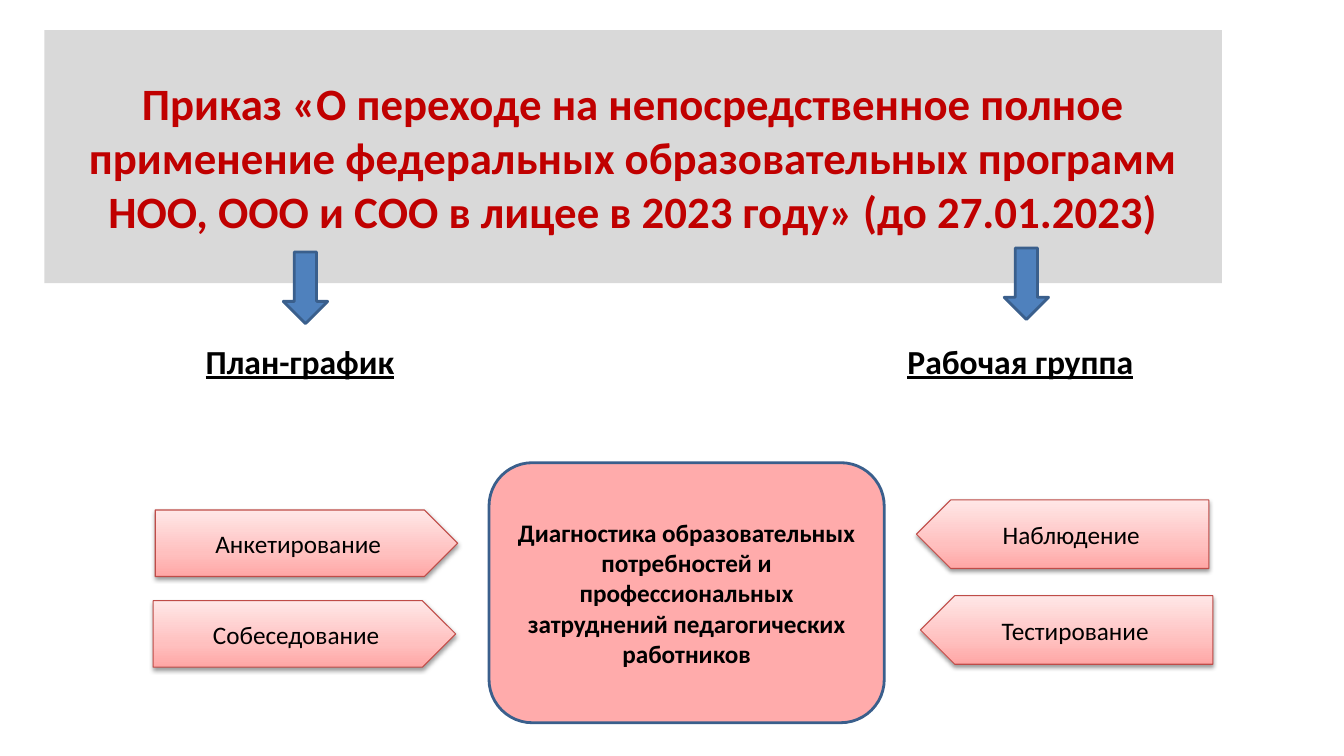
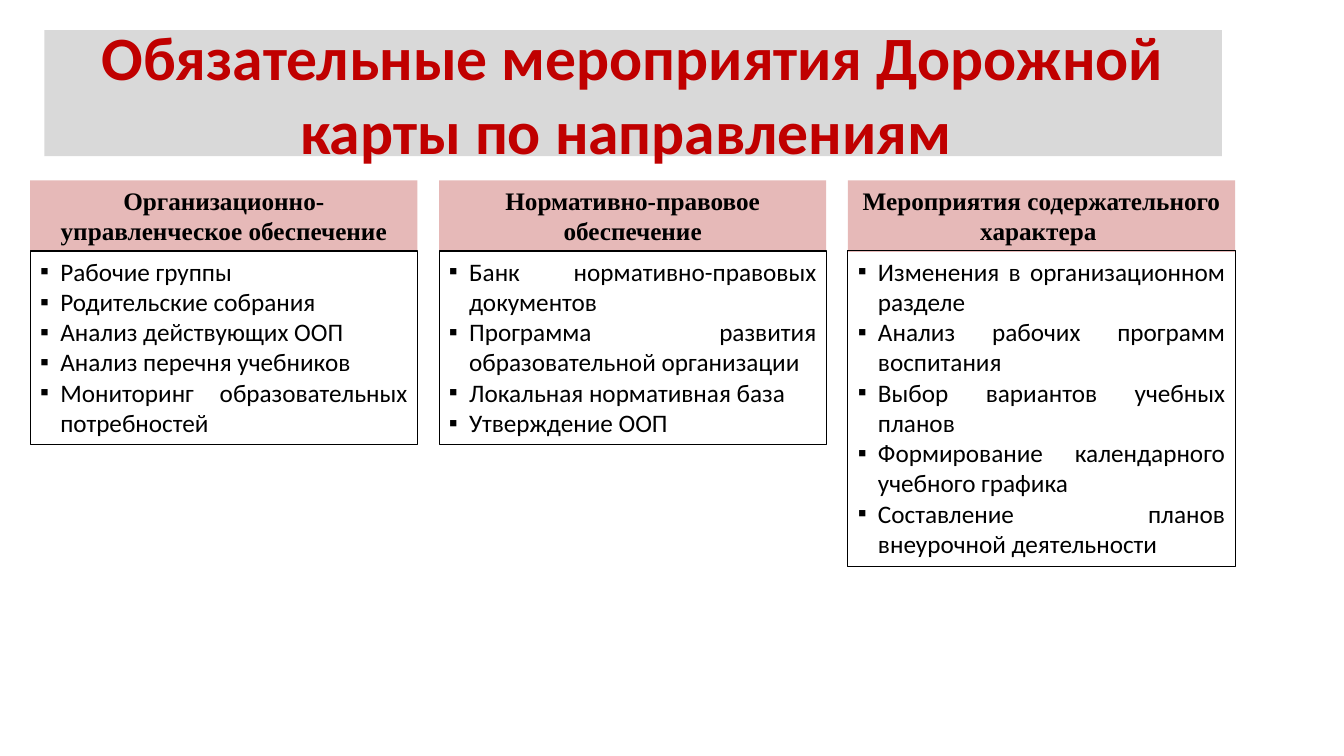
"""Build two slides on the move to the federal educational programmes."""
from lxml import etree
from pptx import Presentation
from pptx.dml.color import RGBColor
from pptx.enum.shapes import MSO_SHAPE
from pptx.enum.text import MSO_ANCHOR, PP_ALIGN
from pptx.oxml import parse_xml
from pptx.oxml.ns import nsdecls, qn
from pptx.util import Inches, Pt

BLACK = RGBColor(0, 0, 0)
TITLE_RED = RGBColor(0xC0, 0, 0)
TITLE_GREY = RGBColor(0xD9, 0xD9, 0xD9)
ARROW_BLUE = RGBColor(0x4F, 0x81, 0xBD)
EDGE_BLUE = RGBColor(0x3A, 0x5F, 0x8C)
CENTRE_PINK = RGBColor(0xFF, 0xAB, 0xAB)
HEADING_PINK = RGBColor(0xE6, 0xB9, 0xB8)
TAG_RED = RGBColor(0xBF, 0x4C, 0x48)
TAG_STOPS = [
    (0, RGBColor(0xFF, 0xA6, 0xA5)),
    (35, RGBColor(0xFF, 0xC0, 0xBF)),
    (100, RGBColor(0xFF, 0xE7, 0xE7)),
]

ORDER_TITLE = ("Приказ «О переходе на непосредственное полное применение "
               "федеральных образовательных программ НОО, ООО и СОО в лицее "
               "в 2023 году» (до 27.01.2023)")
DIAGNOSTICS = ("Диагностика образовательных потребностей и профессиональных "
               "затруднений педагогических работников")
OUTCOMES = [
    ("План-график", (0.53, 3.33, 4.89, 0.5), (2.81, 2.5)),
    ("Рабочая группа", (8.09, 3.33, 4.06, 0.5), (9.96, 2.46)),
]
METHODS = [
    ("Анкетирование", (1.54, 5.06, 3, 0.66), False),
    ("Собеседование", (1.52, 5.96, 3, 0.66), False),
    ("Наблюдение", (9.09, 4.96, 2.9, 0.68), True),
    ("Тестирование", (9.13, 5.91, 2.9, 0.68), True),
]
DIRECTIONS = [
    ("Организационно-управленческое обеспечение", 1.92, [
        "Рабочие группы",
        "Родительские собрания",
        "Анализ действующих ООП",
        "Анализ перечня учебников",
        "Мониторинг образовательных потребностей",
    ]),
    ("Нормативно-правовое обеспечение", 1.92, [
        "Банк нормативно-правовых документов",
        "Программа развития образовательной организации",
        "Локальная нормативная база",
        "Утверждение ООП",
    ]),
    ("Мероприятия содержательного характера ", 3.13, [
        "Изменения в организационном разделе",
        "Анализ рабочих программ воспитания",
        "Выбор вариантов учебных планов",
        "Формирование календарного учебного графика",
        "Составление планов внеурочной деятельности",
    ]),
]


def add_box(slide, kind, box, fill=None, line=None, width=0.75):
    """Add a shadowless preset shape with the given fill and line."""
    s = slide.shapes.add_shape(kind, *map(Inches, box))
    s.shadow.inherit = False
    if fill is None:
        s.fill.background()
    else:
        s.fill.solid()
        s.fill.fore_color.rgb = fill
    if line is None:
        s.line.fill.background()
    else:
        s.line.color.rgb = line
        s.line.width = Pt(width)
    return s


def set_font(p, size, bold=False, color=BLACK, name="Calibri"):
    """Set the font of a whole paragraph."""
    p.font.size = Pt(size)
    p.font.bold = bold
    p.font.name = name
    p.font.color.rgb = color


def write(s, text, size, anchor=MSO_ANCHOR.MIDDLE, **font):
    """Write one centred paragraph into a shape and return it."""
    tf = s.text_frame
    tf.word_wrap = True
    tf.vertical_anchor = anchor
    p = tf.paragraphs[0]
    p.text = text
    p.alignment = PP_ALIGN.CENTER
    set_font(p, size, **font)
    return p


def add_title(slide, text, size, height):
    """Add the grey title band."""
    s = add_box(slide, MSO_SHAPE.RECTANGLE, (0.44, 0.3, 11.68, height), TITLE_GREY)
    write(s, text, size, bold=True, color=TITLE_RED)


def add_outcome(slide, text, box, arrow_at):
    """Add an underlined label and the arrow that leads to it."""
    s = slide.shapes.add_textbox(*map(Inches, box))
    write(s, text, 24, MSO_ANCHOR.TOP, bold=True).font.underline = True
    add_box(slide, MSO_SHAPE.DOWN_ARROW, (*arrow_at, 0.44, 0.71),
            ARROW_BLUE, EDGE_BLUE, 2)


def add_method(slide, text, box, flipped):
    """Add a pentagon tag with a gradient and a soft shadow."""
    s = add_box(slide, MSO_SHAPE.PENTAGON, box, line=TAG_RED)
    sp_pr = s._element.spPr
    if flipped:
        sp_pr.find(qn("a:xfrm")).set("flipH", "1")
    stops = "".join(f'<a:gs pos="{pos * 1000}"><a:srgbClr val="{color}"/></a:gs>'
                    for pos, color in TAG_STOPS)
    sp_pr.replace(sp_pr.find(qn("a:noFill")), parse_xml(
        f'<a:gradFill {nsdecls("a")} rotWithShape="1"><a:gsLst>{stops}</a:gsLst>'
        '<a:lin ang="16200000" scaled="0"/></a:gradFill>'))
    sp_pr.find(qn("a:effectLst")).append(parse_xml(
        f'<a:outerShdw {nsdecls("a")} blurRad="{Pt(3.1)}" dist="{Pt(1.6)}" '
        'dir="5400000" rotWithShape="0"><a:srgbClr val="000000">'
        '<a:alpha val="38000"/></a:srgbClr></a:outerShdw>'))
    write(s, text, 18)


def add_bullets(s, items):
    """Fill a shape with justified, square-bulleted paragraphs."""
    tf = s.text_frame
    tf.word_wrap = True
    tf.vertical_anchor = MSO_ANCHOR.TOP
    for i, item in enumerate(items):
        p = tf.paragraphs[0] if i == 0 else tf.add_paragraph()
        p.text = item
        p.alignment = PP_ALIGN.JUSTIFY
        p_pr = p._p.get_or_add_pPr()
        p_pr.set("marL", str(Inches(0.2)))
        p_pr.set("indent", str(-Inches(0.2)))
        etree.SubElement(p_pr, qn("a:buFont")).set("typeface", "Arial")
        etree.SubElement(p_pr, qn("a:buChar")).set("char", "▪")
        set_font(p, 18)


def add_direction(slide, box, heading, items):
    """Add a column: a pink heading above an outlined list."""
    left, top, width, height = box
    head = add_box(slide, MSO_SHAPE.RECTANGLE, (left, top, width, 0.71), HEADING_PINK)
    write(head, heading, 18, MSO_ANCHOR.TOP, bold=True, name="Times New Roman")
    body = add_box(slide, MSO_SHAPE.RECTANGLE, (left, top + 0.7, width, height),
                   line=BLACK)
    add_bullets(body, items)


def build_order_slide(slide):
    """Build the slide about the order and the diagnostics."""
    add_title(slide, ORDER_TITLE, 32, 2.51)
    for outcome in OUTCOMES:
        add_outcome(slide, *outcome)
    s = add_box(slide, MSO_SHAPE.FLOWCHART_ALTERNATE_PROCESS,
                (4.85, 4.59, 3.92, 2.58), CENTRE_PINK, EDGE_BLUE, 2)
    write(s, DIAGNOSTICS, 18, bold=True)
    for method in METHODS:
        add_method(slide, *method)


def build_directions_slide(slide):
    """Build the slide with one column for each direction."""
    add_title(slide, "Обязательные мероприятия Дорожной карты по направлениям ",
              44, 1.25)
    left, total, width = 0.3, 11.95, 3.84
    pitch = (total - width) / (len(DIRECTIONS) - 1)
    for i, (heading, height, items) in enumerate(DIRECTIONS):
        add_direction(slide, (left + i * pitch, 1.79, width, height), heading, items)


def main():
    """Create and save the presentation."""
    prs = Presentation()
    prs.slide_width = Inches(13.33)
    prs.slide_height = Inches(7.5)
    for build in (build_order_slide, build_directions_slide):
        build(prs.slides.add_slide(prs.slide_layouts[6]))
    prs.save("out.pptx")


if __name__ == "__main__":
    main()
